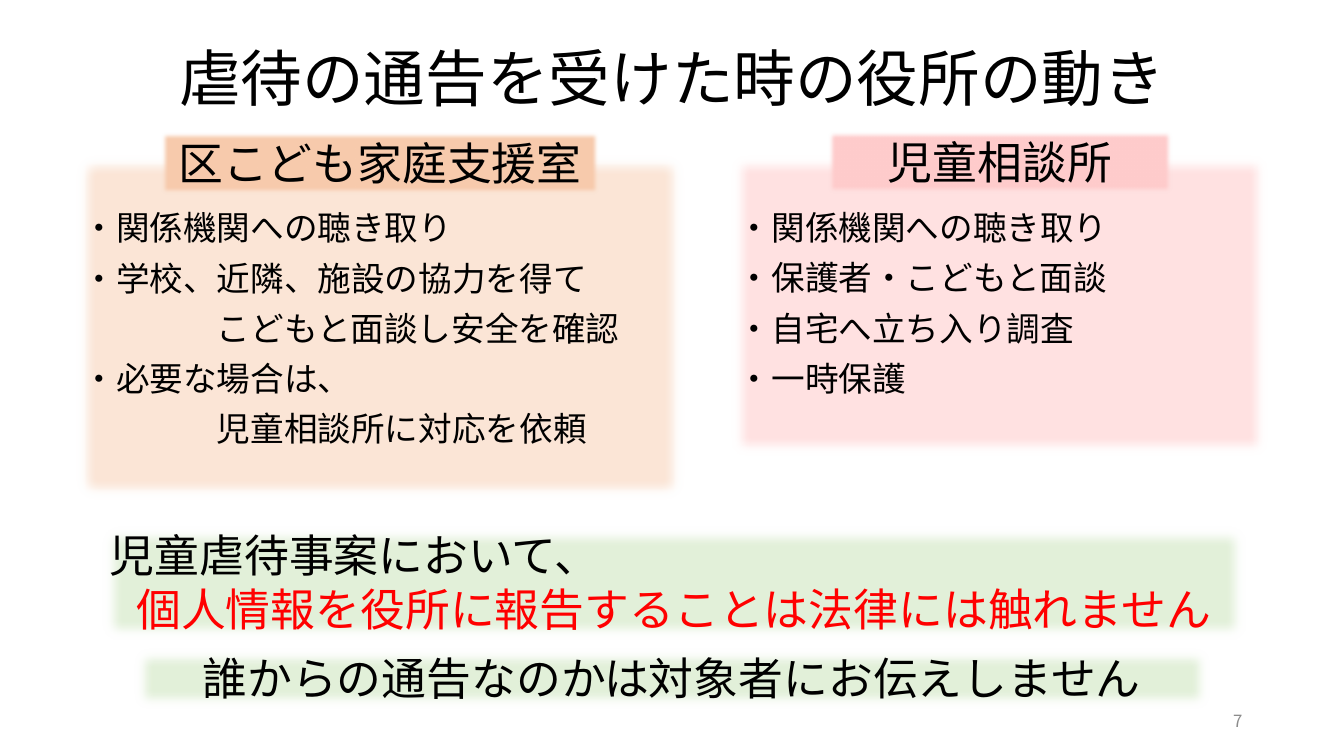
import pptx
import pptx.util
import pptx.dml.color
import pptx.enum.shapes
import pptx.enum.text
import pptx.oxml.ns
from lxml import etree

Inches, Pt = pptx.util.Inches, pptx.util.Pt
Align, Anchor = pptx.enum.text.PP_ALIGN, pptx.enum.text.MSO_ANCHOR
qn = pptx.oxml.ns.qn
FONT = "Noto Sans CJK JP"
BLACK, RED, GRAY, GREEN = "000000", "FF0000", "8C8C8C", "E2F0D9"
FULL_WIDTH_CHARS = 4  # indent of a continued line, in characters

TITLE = "虐待の通告を受けた時の役所の動き"
OFFICES = [
    {"name": "区こども家庭支援室", "name_box": (1.58, 1.3, 4.38, 0.64), "name_fill": "F8CBAD",
     "panel_box": (0.72, 1.5, 6.1, 3.49), "panel_fill": "FBE5D6",
     "actions": [("・関係機関への聴き取り", False),
                 ("・学校、近隣、施設の協力を得て", False),
                 ("こどもと面談し安全を確認", True),
                 ("・必要な場合は、", False),
                 ("児童相談所に対応を依頼", True)]},
    {"name": "児童相談所", "name_box": (8.2, 1.29, 3.44, 0.64), "name_fill": "FFCCCC",
     "panel_box": (7.22, 1.5, 5.39, 3.06), "panel_fill": "FFE1E1",
     "actions": [("・関係機関への聴き取り", False),
                 ("・保護者・こどもと面談", False),
                 ("・自宅へ立ち入り調査", False),
                 ("・一時保護", False)]},
]
ANONYMITY = "誰からの通告なのかは対象者にお伝えしません"
LAW_INTRO = "児童虐待事案において、"
LAW = "個人情報を役所に報告することは法律には触れません"
PAGE = "7"


def rgb(color):
    return pptx.dml.color.RGBColor.from_string(color)


def write(frame, text, size=32, color=BLACK, align=Align.LEFT, line=1.0, after=0, indent=0):
    """Add one paragraph, using the empty first one when it is free."""
    first = frame.paragraphs[0]
    paragraph = frame.add_paragraph() if first.runs else first
    paragraph.alignment = align
    paragraph.line_spacing = line
    paragraph.space_before, paragraph.space_after = Pt(0), Pt(after)
    if indent:
        paragraph._p.get_or_add_pPr().set("marL", str(Pt(indent)))
    run = paragraph.add_run()
    run.text = text
    run.font.size, run.font.name = Pt(size), FONT
    run.font.color.rgb = rgb(color)
    etree.SubElement(run._r.get_or_add_rPr(), qn("a:ea")).set("typeface", FONT)


def add_soft_box(slide, box, fill, edge=0.12):
    """Add a borderless rectangle with soft edges and return its text frame."""
    shape = slide.shapes.add_shape(pptx.enum.shapes.MSO_SHAPE.RECTANGLE, *map(Inches, box))
    shape.fill.solid()
    shape.fill.fore_color.rgb = rgb(fill)
    shape.line.fill.background()
    shape.shadow.inherit = False
    effects = shape._element.spPr.find(qn("a:effectLst"))
    etree.SubElement(effects, qn("a:softEdge")).set("rad", str(Inches(edge)))
    frame = shape.text_frame
    frame.word_wrap = True
    frame.vertical_anchor = Anchor.TOP
    return frame


def main():
    deck = pptx.Presentation()
    deck.slide_width, deck.slide_height = Inches(13.33), Inches(7.5)
    slide = deck.slides.add_slide(deck.slide_layouts[5])

    title = slide.shapes.title
    title.left, title.top, title.width, title.height = map(Inches, (0.92, 0.22, 11.5, 1.18))
    title.text_frame.vertical_anchor = Anchor.MIDDLE
    write(title.text_frame, TITLE, size=44, align=Align.CENTER, line=0.9)

    for office in OFFICES:
        panel = add_soft_box(slide, office["panel_box"], office["panel_fill"])
        panel.margin_top = Inches(0.6)
        for action, continued in office["actions"]:
            write(panel, action, size=24, line=0.9, after=10,
                  indent=24 * FULL_WIDTH_CHARS if continued else 0)

    page = slide.shapes.add_textbox(*map(Inches, (9.42, 6.95, 3, 0.4))).text_frame
    page.word_wrap = True
    page.vertical_anchor = Anchor.MIDDLE
    write(page, PAGE, size=12, color=GRAY, align=Align.RIGHT)

    for office in OFFICES:
        name = add_soft_box(slide, office["name_box"], office["name_fill"], edge=0.05)
        write(name, office["name"], align=Align.CENTER)

    anonymity = add_soft_box(slide, (1.31, 6.41, 10.71, 0.64), GREEN)
    write(anonymity, ANONYMITY, align=Align.CENTER)
    law = add_soft_box(slide, (0.99, 5.19, 11.39, 1.18), GREEN)
    write(law, LAW_INTRO)
    write(law, LAW, color=RED, align=Align.CENTER)

    deck.save("out.pptx")


if __name__ == "__main__":
    main()
